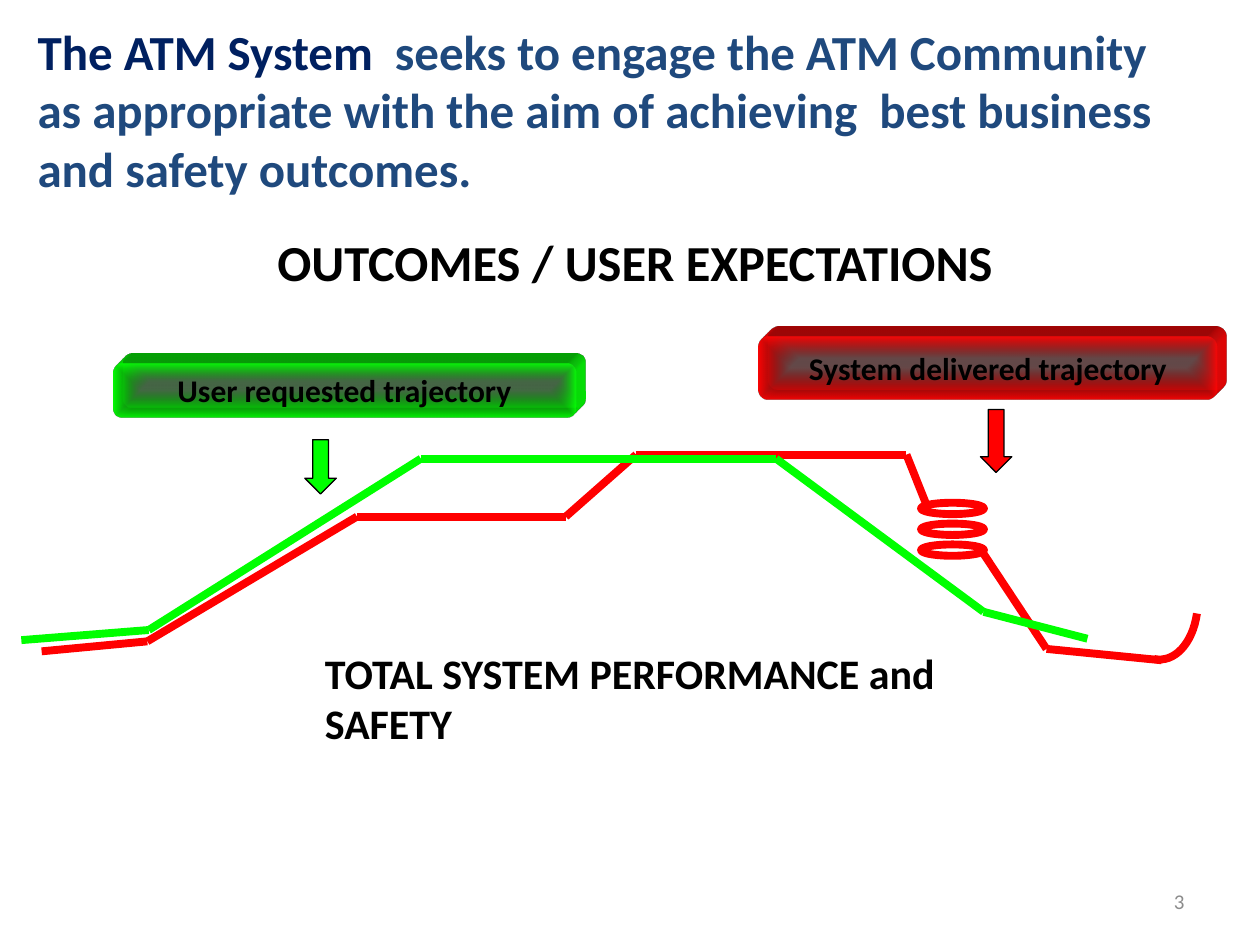
from dataclasses import dataclass
from itertools import pairwise

from lxml import etree
from pptx import Presentation
from pptx.dml.color import RGBColor
from pptx.enum.shapes import MSO_CONNECTOR, MSO_SHAPE
from pptx.enum.text import MSO_ANCHOR, PP_ALIGN
from pptx.oxml import parse_xml
from pptx.oxml.ns import qn
from pptx.util import Pt

DOWN_ARROW, OVAL, ROUNDED = MSO_SHAPE.DOWN_ARROW, MSO_SHAPE.OVAL, MSO_SHAPE.ROUNDED_RECTANGLE
STRAIGHT = MSO_CONNECTOR.STRAIGHT
TOP, MIDDLE = MSO_ANCHOR.TOP, MSO_ANCHOR.MIDDLE
LEFT, CENTER, RIGHT = PP_ALIGN.LEFT, PP_ALIGN.CENTER, PP_ALIGN.RIGHT

COLORS = {
    "black": "000000",
    "grey": "8C8C8C",
    "navy": "002060",
    "blue": "1F497D",
    "cream": "EEECE1",
    "red": "FF0000",
    "green": "00FF00",
}
FONT = "Calibri"
TRACK_WIDTH = 4.5
NS = 'xmlns:a="http://schemas.openxmlformats.org/drawingml/2006/main"'

Point = tuple[float, float]
Box = tuple[float, float, float, float]


@dataclass
class Trajectory:
    label: str
    color: str
    button: Box
    arrow: Box
    tracks: list[list[Point]]
    loops: list[Box]
    curve: list[Point]


TRAJECTORIES = [
    Trajectory(
        "System delivered trajectory", "red", (433.5, 192.2, 262, 36), (560.2, 234, 18, 36),
        [
            [(23.8, 372.2), (84.2, 366.5), (204, 295.2), (323.3, 295.2),
             (363.5, 259.8), (518, 259.8), (529.2, 288)],
            [(562.3, 316.8), (598, 370.8), (663.8, 377.3)],
        ],
        [(526.3, 287.3 + 11.9 * i, 36, 6.5) for i in range(3)],
        [(684, 350.6), (681.5, 368), (671, 379), (659.5, 376.6)],
    ),
    Trajectory(
        "User requested trajectory", "green", (64.8, 207.4, 264.2, 31), (174.2, 251.3, 18, 31),
        [[(12.2, 365.8), (85, 360), (240.5, 262.1), (443.5, 262.1),
          (562, 349.6), (621.4, 365)]],
        [],
        [],
    ),
]


def rgb(name: str) -> RGBColor:
    return RGBColor.from_string(COLORS[name])


def write(sp, *runs: tuple[str, str], size: float, bold=True, align=LEFT,
          anchor=MIDDLE, wrap=True, shadow=False) -> None:
    tf = sp.text_frame
    tf.word_wrap = wrap
    tf.vertical_anchor = anchor
    p = tf.paragraphs[0]
    p.alignment = align
    for text, color in runs:
        r = p.add_run()
        r.text = text
        r.font.name, r.font.size, r.font.bold = FONT, Pt(size), bold
        r.font.color.rgb = rgb(color)
        if shadow:
            r.font._element.find(qn("a:solidFill")).addnext(parse_xml(
                f'<a:effectLst {NS}><a:outerShdw dist="35921" dir="2700000">'
                f'<a:srgbClr val="{COLORS["cream"]}"/></a:outerShdw></a:effectLst>'))


def add_text(s, box: Box, *runs: tuple[str, str], **style) -> None:
    write(s.shapes.add_textbox(*map(Pt, box)), *runs, **style)


def add_shape(shapes, kind, box: Box, fill: str | None = None,
              line: str | None = None, width: float = 0.75):
    sp = shapes.add_shape(kind, *map(Pt, box))
    sp.shadow.inherit = False
    style_shape(sp, fill, line, width)
    return sp


def style_shape(sp, fill: str | None, line: str | None, width: float) -> None:
    if fill:
        sp.fill.solid()
        sp.fill.fore_color.rgb = rgb(fill)
    else:
        sp.fill.background()
    if line:
        sp.line.color.rgb = rgb(line)
        sp.line.width = Pt(width)
    else:
        sp.line.fill.background()


def add_track(shapes, points: list[Point], color: str) -> None:
    for start, end in pairwise(points):
        line = shapes.add_connector(STRAIGHT, *map(Pt, start + end))
        line.line.color.rgb = rgb(color)
        line.line.width = Pt(TRACK_WIDTH)
        etree.SubElement(line._element.spPr, qn("a:effectLst"))


def bezier(ends: list[Point], t: float) -> Point:
    weights = ((1 - t) ** 3, 3 * t * (1 - t) ** 2, 3 * t * t * (1 - t), t ** 3)
    return tuple(sum(w * pt[axis] for w, pt in zip(weights, ends)) for axis in (0, 1))


def add_curve(shapes, ends: list[Point], color: str, steps: int = 16) -> None:
    points = [tuple(map(Pt, bezier(ends, i / steps))) for i in range(steps + 1)]
    builder = shapes.build_freeform(*points[0])
    builder.add_line_segments(points[1:], close=False)
    sp = builder.convert_to_shape()
    sp.shadow.inherit = False
    style_shape(sp, None, color, TRACK_WIDTH)


def add_button(shapes, box: Box, label: str, color: str) -> None:
    sp = add_shape(shapes, ROUNDED, box)
    spPr = sp._element.spPr
    glow = COLORS[color]
    spPr.replace(spPr.find(qn("a:noFill")), parse_xml(
        f'<a:gradFill {NS} rotWithShape="0"><a:gsLst>'
        f'<a:gs pos="0"><a:srgbClr val="{COLORS["black"]}"><a:alpha val="40000"/></a:srgbClr></a:gs>'
        f'<a:gs pos="100000"><a:srgbClr val="{glow}"><a:alpha val="90000"/></a:srgbClr></a:gs>'
        '</a:gsLst><a:path path="shape"><a:fillToRect l="50000" t="50000" r="50000" b="50000"/>'
        '</a:path></a:gradFill>'))
    spPr.append(parse_xml(
        f'<a:scene3d {NS}><a:camera prst="legacyObliqueTopRight"/>'
        '<a:lightRig rig="legacyFlat3" dir="b"/></a:scene3d>'))
    spPr.append(parse_xml(
        f'<a:sp3d {NS} extrusionH="201600" prstMaterial="legacyMatte">'
        '<a:bevelT w="13500" h="13500" prst="angle"/><a:bevelB w="13500" h="13500" prst="angle"/>'
        f'<a:extrusionClr><a:srgbClr val="{glow}"/></a:extrusionClr></a:sp3d>'))
    write(sp, (label, "black"), size=18, align=CENTER, wrap=False)


def add_trajectory(s, item: Trajectory) -> None:
    shapes = s.shapes.add_group_shape().shapes
    add_shape(shapes, DOWN_ARROW, item.arrow, item.color, "black")
    for points in item.tracks:
        add_track(shapes, points, item.color)
    if item.curve:
        add_curve(shapes, item.curve, item.color)
    for box in item.loops:
        add_shape(shapes, OVAL, box, None, item.color, TRACK_WIDTH)
    add_button(shapes, item.button, item.label, item.color)


def main() -> None:
    prs = Presentation()
    prs.slide_width, prs.slide_height = Pt(720), Pt(540)
    s = prs.slides.add_slide(prs.slide_layouts[6])
    add_text(s, (516, 500.4, 168, 28.8), ("3", "grey"), size=12, bold=False, align=RIGHT)
    add_text(s, (48, 120, 630, 59), ("OUTCOMES / USER EXPECTATIONS", "black"),
             size=28.8, align=CENTER)
    add_text(s, (178.6, 366.5, 418.3, 65.5), ("TOTAL SYSTEM PERFORMANCE and SAFETY", "black"),
             size=24, anchor=TOP)
    add_text(s, (14.4, 17.5, 672, 90), ("The ATM System  ", "navy"),
             ("seeks to engage the ATM Community as appropriate with the aim of "
              "achieving  best business and safety outcomes.", "blue"),
             size=28, shadow=True)
    for item in TRAJECTORIES:
        add_trajectory(s, item)
    prs.save("out.pptx")


if __name__ == "__main__":
    main()
